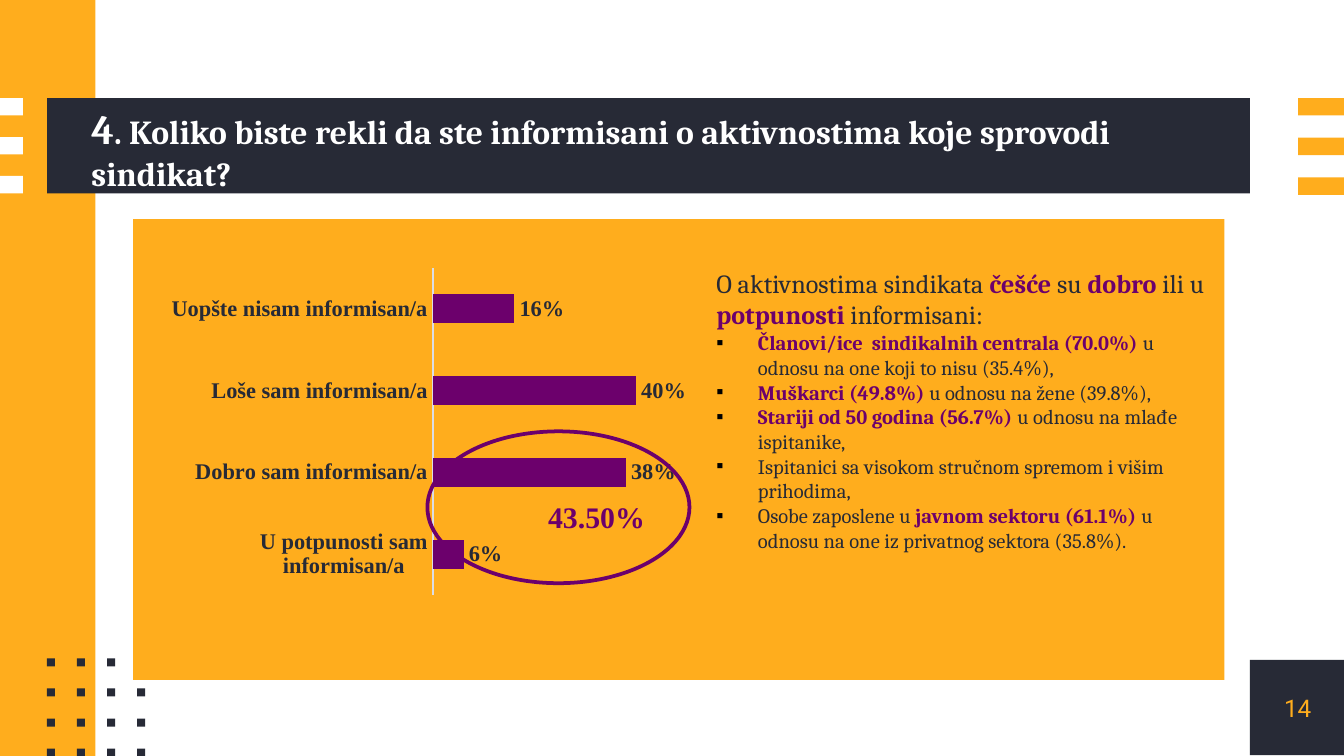
"""Build the survey slide on how informed members are about union activities."""
from dataclasses import dataclass

import lxml.etree
import pptx
import pptx.chart.data
import pptx.dml.color
import pptx.enum.chart
import pptx.enum.shapes
import pptx.enum.text
import pptx.oxml.ns
import pptx.util

Inches = pptx.util.Inches
Pt = pptx.util.Pt
qn = pptx.oxml.ns.qn

COLORS = {
    "orange": "FFAD1D",
    "navy": "272A36",
    "purple": "6C006C",
    "white": "FFFFFF",
    "axis": "DBDDE5",
    "bullet": "000000",
}

SLIDE_WIDTH = 10
SLIDE_HEIGHT = SLIDE_WIDTH * 9 / 16


@dataclass
class Box:
    left: float
    top: float
    width: float
    height: float


@dataclass
class Run:
    text: str
    size: float
    color: str = "navy"
    bold: bool = False
    font: str = "Cambria"


@dataclass
class Block:
    box: Box
    color: str


def plain(text: str) -> Run:
    """Return a regular list run."""
    return Run(text, 11)


def strong(text: str, size: float = 11) -> Run:
    """Return a highlighted run."""
    return Run(text, size, "purple", True)


BLOCKS = [
    Block(Box(9.3, 4.91, 0.71, 0.71), "navy"),
    Block(Box(0, 0, 0.71, SLIDE_HEIGHT), "orange"),
    Block(Box(0.35, 0.73, 8.95, 0.71), "navy"),
    *[Block(Box(0, 0.73 + 0.29 * row, 0.17, 0.13), "white") for row in range(3)],
    *[Block(Box(0.35 + 0.67 * col / 3, 4.9 + 0.67 * row / 3, 0.06, 0.06), "navy")
      for row in range(4) for col in range(4) if (row, col) != (0, 3)],
    *[Block(Box(9.66, 0.73 + 0.59 * row / 2, 0.34, 0.13), "orange") for row in range(3)],
    Block(Box(0.99, 1.63, 8.12, 3.43), "orange"),
]

QUESTION = [
    Run("4", 22, "white", True),
    Run(". Koliko biste rekli da ste informisani o aktivnostima koje sprovodi sindikat?",
        18, "white", True),
]

INTRO = [
    Run("O aktivnostima sindikata ", 14), strong("češće", 14), Run(" su ", 14),
    strong("dobro", 14), Run(" ili u ", 14), strong("potpunosti", 14),
    Run(" informisani:", 14),
]

FINDINGS = [
    [strong("Članovi/ice  sindikalnih centrala (70.0%) "),
     plain("u odnosu na one koji to nisu (35.4%),")],
    [strong("Muškarci (49.8%)"), plain(" u odnosu na žene (39.8%),")],
    [strong("Stariji od 50 godina (56.7%) "), plain("u odnosu na mlađe ispitanike,")],
    [plain("Ispitanici sa visokom stručnom spremom i višim prihodima,")],
    [plain("Osobe zaposlene u "), strong("javnom sektoru (61.1%) "),
     plain("u odnosu na one iz privatnog sektora (35.8%).")],
]

ANSWERS = {
    "Uopšte nisam informisan/a": 0.16,
    "Loše sam informisan/a": 0.40,
    "Dobro sam informisan/a": 0.38,
    "U potpunosti sam informisan/a": 0.06,
}


def rgb(color: str) -> pptx.dml.color.RGBColor:
    """Return a palette colour."""
    return pptx.dml.color.RGBColor.from_string(COLORS[color])


def lengths(box: Box) -> list:
    """Return the box as slide lengths."""
    return [Inches(side) for side in (box.left, box.top, box.width, box.height)]


def add_block(slide, block: Block) -> None:
    """Draw a plain filled rectangle."""
    rectangle = slide.shapes.add_shape(
        pptx.enum.shapes.MSO_SHAPE.RECTANGLE, *lengths(block.box))
    rectangle.shadow.inherit = False
    rectangle.fill.solid()
    rectangle.fill.fore_color.rgb = rgb(block.color)
    rectangle.line.fill.background()


def style_font(font, run: Run) -> None:
    """Apply the run's look to a font."""
    font.size = Pt(run.size)
    font.name = run.font
    font.bold = run.bold
    font.color.rgb = rgb(run.color)


def add_runs(paragraph, runs: list[Run]) -> None:
    """Write runs into a paragraph."""
    for part in runs:
        run = paragraph.add_run()
        run.text = part.text
        style_font(run.font, part)


def set_frame(shape, box: Box, anchor, inset: bool = True):
    """Place a text shape and return its prepared frame."""
    shape.left, shape.top, shape.width, shape.height = lengths(box)
    frame = shape.text_frame
    frame.word_wrap = True
    frame.auto_size = pptx.enum.text.MSO_AUTO_SIZE.NONE
    frame.vertical_anchor = anchor
    if not inset:
        frame.margin_left = frame.margin_right = frame.margin_top = frame.margin_bottom = 0
    return frame


def set_bullet(paragraph, symbol: str = "") -> None:
    """Give a paragraph its bullet and indent, or none."""
    properties = paragraph._p.get_or_add_pPr()
    indent = Inches(0.31) if symbol else 0
    properties.set("marL", str(indent))
    properties.set("indent", str(-indent))
    if not symbol:
        lxml.etree.SubElement(properties, qn("a:buNone"))
        return
    tint = lxml.etree.SubElement(properties, qn("a:buClr"))
    lxml.etree.SubElement(tint, qn("a:srgbClr"), val=COLORS["bullet"])
    lxml.etree.SubElement(properties, qn("a:buChar"), char=symbol)


def add_answers_chart(slide, box: Box) -> None:
    """Draw the bar chart of answers."""
    data = pptx.chart.data.CategoryChartData(number_format="0%")
    data.categories = list(ANSWERS)
    data.add_series("Series 1", list(ANSWERS.values()))
    chart = slide.shapes.add_chart(
        pptx.enum.chart.XL_CHART_TYPE.BAR_CLUSTERED, *lengths(box), data).chart
    chart.has_legend = False
    chart.has_title = False
    style_font(chart.font, Run("", 10, font="Times New Roman"))
    label_style = Run("", 11.97, bold=True, font="Times New Roman")

    answers = chart.category_axis
    answers.reverse_order = True
    answers.major_tick_mark = pptx.enum.chart.XL_TICK_MARK.NONE
    answers.format.line.color.rgb = rgb("axis")
    answers.format.line.width = Pt(0.75)
    style_font(answers.tick_labels.font, label_style)
    shares = chart.value_axis
    shares.minimum_scale, shares.maximum_scale = 0, 0.5
    shares.has_major_gridlines = False
    shares.visible = False

    plot = chart.plots[0]
    plot.gap_width = 182
    plot.vary_by_categories = False
    bars = plot.series[0]
    bars.format.fill.solid()
    bars.format.fill.fore_color.rgb = rgb("purple")
    labels = bars.data_labels
    labels.show_value = True
    labels.position = pptx.enum.chart.XL_LABEL_POSITION.OUTSIDE_END
    labels.number_format = "0%"
    labels.number_format_is_linked = False
    style_font(labels.font, label_style)

    area = chart.element.find(".//" + qn("c:plotArea"))
    for old in area.findall(qn("c:layout")):
        area.remove(old)
    layout = lxml.etree.Element(qn("c:layout"))
    area.insert(0, layout)
    manual = lxml.etree.SubElement(layout, qn("c:manualLayout"))
    for tag, value in (("layoutTarget", "inner"), ("xMode", "edge"), ("yMode", "edge"),
                       ("x", "0.51"), ("y", "0.02"), ("w", "0.49"), ("h", "0.96")):
        lxml.etree.SubElement(manual, qn("c:" + tag), val=value)


def main() -> None:
    """Build and save the slide."""
    deck = pptx.Presentation()
    deck.slide_width, deck.slide_height = Inches(SLIDE_WIDTH), Inches(SLIDE_HEIGHT)
    slide = deck.slides.add_slide(deck.slide_layouts[1])
    anchors = pptx.enum.text.MSO_ANCHOR
    aligns = pptx.enum.text.PP_ALIGN
    question, findings = slide.shapes.title, slide.placeholders[1]

    for block in BLOCKS:
        add_block(slide, block)

    slide.shapes.element.append(question.element)
    heading = set_frame(question, Box(0.68, 0.75, 8.58, 0.71), anchors.MIDDLE, False)
    heading.paragraphs[0].alignment = aligns.LEFT
    add_runs(heading.paragraphs[0], QUESTION)

    number_box = BLOCKS[0].box
    page = set_frame(slide.shapes.add_textbox(*lengths(number_box)), number_box,
                     anchors.MIDDLE, False)
    page.paragraphs[0].alignment = aligns.CENTER
    add_runs(page.paragraphs[0], [Run("14", 13, "orange", font="Roboto")])

    add_answers_chart(slide, Box(1.26, 1.94, 3.85, 2.54))

    slide.shapes.element.append(findings.element)
    body = set_frame(findings, Box(5.23, 1.94, 3.91, 3.11), anchors.TOP)
    for index, runs in enumerate([INTRO, *FINDINGS]):
        paragraph = body.add_paragraph() if index else body.paragraphs[0]
        paragraph.level = 3 if index else 0
        set_bullet(paragraph, "▪" if index else "")
        paragraph.space_before = Pt(0)
        add_runs(paragraph, runs)

    ring = slide.shapes.add_shape(
        pptx.enum.shapes.MSO_SHAPE.OVAL, *lengths(Box(3.18, 3.21, 1.95, 1.13)))
    ring.shadow.inherit = False
    ring.fill.background()
    ring.line.color.rgb = rgb("purple")
    ring.line.width = Pt(2)

    total_box = Box(3.98, 3.66, 0.99, 0.37)
    total = set_frame(slide.shapes.add_textbox(*lengths(total_box)), total_box, anchors.TOP)
    add_runs(total.paragraphs[0],
             [Run("43.50%", 16, "purple", True, "Times New Roman")])

    deck.save("out.pptx")


if __name__ == "__main__":
    main()
